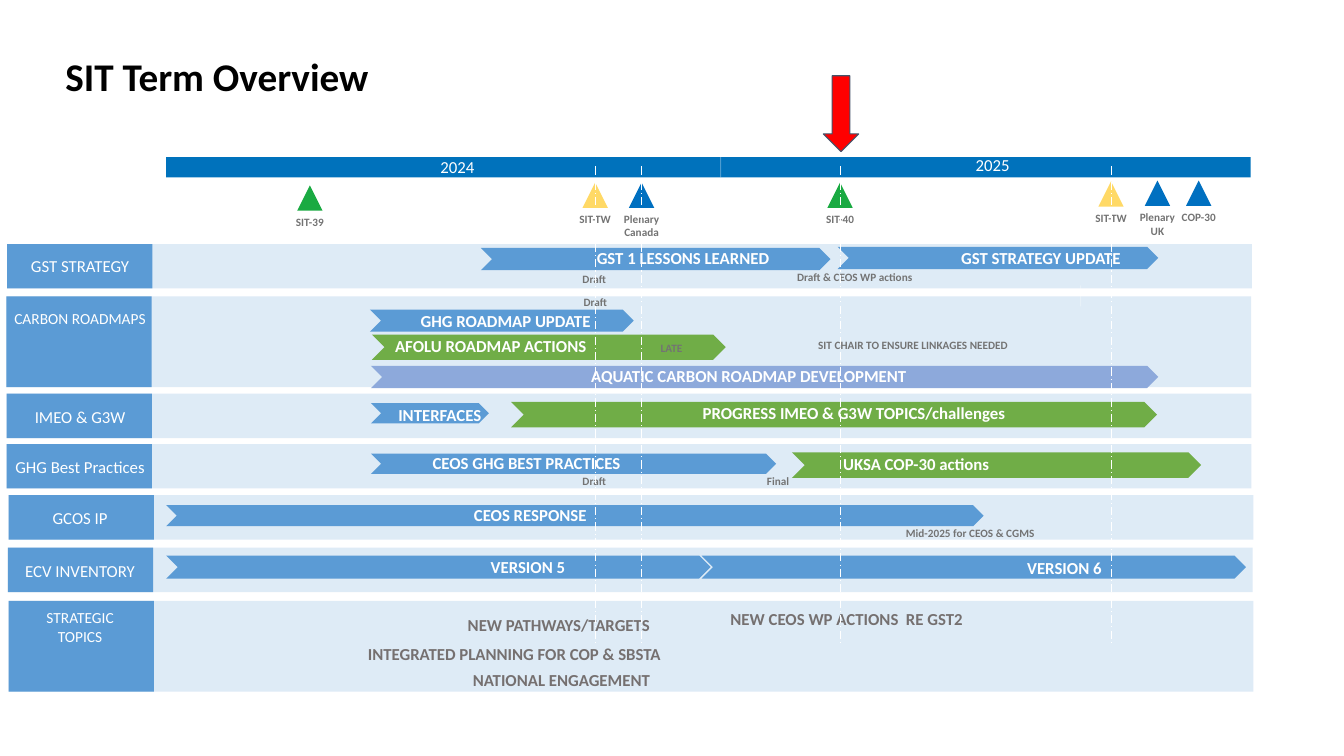
from pptx import Presentation
from pptx.dml.color import RGBColor
from pptx.enum.dml import MSO_LINE
from pptx.enum.shapes import MSO_CONNECTOR, MSO_SHAPE
from pptx.enum.text import MSO_ANCHOR, PP_ALIGN
from pptx.oxml.ns import qn
from pptx.oxml.xmlchemy import OxmlElement
from pptx.util import Cm, Pt

RECT, BAR, PEAK, DOWN = (MSO_SHAPE.RECTANGLE, MSO_SHAPE.CHEVRON,
                         MSO_SHAPE.ISOSCELES_TRIANGLE, MSO_SHAPE.DOWN_ARROW)
LEFT, MID = PP_ALIGN.LEFT, PP_ALIGN.CENTER
SOLID, DASH = MSO_LINE.SOLID, MSO_LINE.LONG_DASH_DOT
FONT = "Calibri"
BLUE, GREEN, LILAC, WHITE = "5B9BD5", "70AD47", "8DA9DB", "FFFFFF"
GREY, STONE = "737373", "757070"
SIT, TECH, MEET = "1AAA42", "FFD966", "0070C0"
rgb = RGBColor.from_string

deck = Presentation()
deck.slide_width, deck.slide_height = Cm(33.87), Cm(19.05)
slide = deck.slides.add_slide(deck.slide_layouts[5])
shapes = slide.shapes


def draw(kind, x, y, w, h, color):
    shape = shapes.add_shape(kind, Cm(x), Cm(y), Cm(w), Cm(h))
    shape.shadow.inherit = False
    shape.fill.solid()
    shape.fill.fore_color.rgb = rgb(color)
    shape.line.fill.background()
    return shape


def write(text, x, y, w, h=0.51, size=12, color=WHITE, bold=True, align=MID):
    """Add a text box without margins, its text centred vertically."""
    frame = shapes.add_textbox(Cm(x), Cm(y), Cm(w), Cm(h)).text_frame
    frame.margin_left = frame.margin_right = 0
    frame.margin_top = frame.margin_bottom = 0
    frame.word_wrap = True
    frame.vertical_anchor = MSO_ANCHOR.MIDDLE
    frame.text = text
    for para in frame.paragraphs:
        para.alignment = align
        font = para.font
        font.name, font.size, font.bold = FONT, Pt(size), bold
        font.color.rgb = rgb(color)


# Title
title = shapes.title
title.left, title.top, title.width, title.height = Cm(1.4), Cm(1.07), Cm(10.39), Cm(1.7)
frame = title.text_frame
frame.margin_left = frame.margin_right = Cm(0.25)
frame.margin_top = frame.margin_bottom = Cm(0.25)
frame.vertical_anchor = MSO_ANCHOR.TOP
frame.text = "SIT Term Overview"
head = frame.paragraphs[0]
head.alignment = LEFT
head.font.name, head.font.size, head.font.bold = FONT, Pt(28), True
head.font.color.rgb = rgb("000000")

# Rows: label, left, top, height, label top, label size
rows = [
    ("GST STRATEGY", 0.18, 6.15, 1.12, 6.45, 12),
    ("CARBON ROADMAPS", 0.16, 7.47, 2.29, 7.77, 11),
    ("IMEO & G3W", 0.17, 9.92, 1.12, 10.24, 12),
    ("GHG Best Practices", 0.17, 11.19, 1.12, 11.51, 12),
    ("GCOS IP", 0.22, 12.48, 1.12, 12.8, 12),
    ("ECV INVENTORY", 0.2, 13.8, 1.12, 14.12, 12),
    ("STRATEGIC\vTOPICS", 0.22, 15.14, 2.29, 15.54, 11),
]
for name, x, y, h, top, size in rows:
    band = draw(RECT, x, y, 31.37, h, BLUE)
    alpha = OxmlElement("a:alpha")
    alpha.set("val", "20000")
    band._element.spPr.find(".//" + qn("a:srgbClr")).append(alpha)
    draw(RECT, x, y, 3.66, h, BLUE)
    write(name, 0.19, top, 3.66, size=size, bold=False)

# Year bar
draw(RECT, 4.19, 3.96, 27.33, 0.51, "0072BC")
write("2024", 11.1, 3.94, 1.68, bold=False, align=LEFT)
write("2025", 24.59, 3.91, 1.55, bold=False, align=LEFT)

# Milestones: label, centre, top, colour, whether a dashed line runs down
marks = [
    ("SIT-39", 7.81, 4.67, SIT, False),
    ("SIT-TW", 15, 4.6, TECH, True),
    ("Plenary\nCanada", 16.17, 4.6, MEET, True),
    ("SIT-40", 21.17, 4.6, SIT, True),
    ("SIT-TW", 28, 4.57, TECH, True),
    ("Plenary\nUK", 29.17, 4.55, MEET, False),
    ("COP-30", 30.21, 4.55, MEET, False),
]
for name, mid, y, color, _ in marks:
    draw(PEAK, mid - 0.32, y, 0.64, 0.64, color)
    lines = name.count("\n") + 1
    write(name, mid - 0.65, y + 0.75, 1.3, 0.34 * lines, 8, GREY)

# Activities: bar left, top, width, height, colour; label, left, top, width
bars = [
    (12.12, 6.25, 8.81, 0.56, BLUE, "GST 1 LESSONS LEARNED", 14.88, 6.25, 4.67),
    (21.11, 6.22, 8.08, 0.56, BLUE, "GST STRATEGY UPDATE", 23.9, 6.25, 4.67),
    (9.32, 7.8, 6.65, 0.56, BLUE, "GHG ROADMAP UPDATE", 10.41, 7.82, 4.67),
    (9.37, 8.43, 8.92, 0.64, GREEN, "AFOLU ROADMAP ACTIONS", 9.78, 8.46, 5.18),
    (9.35, 9.22, 19.84, 0.56, LILAC, "AQUATIC CARBON ROADMAP DEVELOPMENT", 13.34, 9.22, 11.07),
    (9.35, 10.16, 2.97, 0.51, BLUE, "INTERFACES", 8.75, 10.19, 4.67),
    (12.88, 10.13, 16.28, 0.64, GREEN, "PROGRESS IMEO & G3W TOPICS/challenges", 17.12, 10.16, 8.81),
    (9.35, 11.43, 10.21, 0.51, BLUE, "CEOS GHG BEST PRACTICES", 10.41, 11.4, 5.72),
    (19.96, 11.4, 10.31, 0.64, GREEN, "UKSA COP-30 actions", 20.5, 11.43, 5.18),
    (4.19, 12.73, 20.6, 0.53, BLUE, "CEOS RESPONSE", 11.03, 12.73, 4.67),
    (4.19, 14, 13.72, 0.58, BLUE, "VERSION 5", 10.97, 14.02, 4.67),
    (17.68, 14, 13.72, 0.58, BLUE, "VERSION 6", 24.49, 14.05, 4.67),
]
for x, y, w, h, color, name, left, top, wide in bars:
    draw(BAR, x, y, w, h, color)
    write(name, left, top, wide)

notes = [
    ("Draft", 14.68, 6.86, 1.55),
    ("Draft & CEOS WP actions", 20.09, 6.81, 3.15),
    ("Draft", 14.71, 7.44, 1.55),
    ("LATE", 16.65, 8.6, 1),
    ("SIT CHAIR TO ENSURE LINKAGES NEEDED", 20.62, 8.53, 5.21),
    ("Draft", 14.68, 11.94, 1.55),
    ("Final", 19.33, 11.94, 1.55),
    ("Mid-2025 for CEOS & CGMS", 22.83, 13.26, 3.66),
]
for name, x, y, w in notes:
    write(name, x, y, w, 0.34, 8, GREY, align=LEFT)

topics = [
    ("NEW CEOS WP ACTIONS  RE GST2", 18.29, 15.34, 6.1),
    ("NEW PATHWAYS/TARGETS", 9.88, 15.49, 8.41),
    ("INTEGRATED PLANNING FOR COP & SBSTA", 8.76, 16.21, 8.41),
    ("NATIONAL ENGAGEMENT", 11.1, 16.87, 6.1),
]
for name, x, y, w in topics:
    write(name, x, y, w, color=STONE)

# White rules: x, top, bottom, dash, opacity in percent
rules = [(18.16, 3.96, 4.47, SOLID, 29), (27.23, 7.19, 7.72, SOLID, 29)]
rules += [(mid, 4.19, 16.26, DASH, 100) for _, mid, _, _, down in marks if down]
for x, top, foot, dash, shown in rules:
    rule = shapes.add_connector(MSO_CONNECTOR.STRAIGHT, Cm(x), Cm(top), Cm(x), Cm(foot))
    rule.line.color.rgb = rgb(WHITE)
    rule.line.width = Pt(0.75)
    rule.line.dash_style = dash
    props = rule._element.spPr
    props.append(OxmlElement("a:effectLst"))
    if shown < 100:
        alpha = OxmlElement("a:alpha")
        alpha.set("val", str(shown * 1000))
        props.find(".//" + qn("a:srgbClr")).append(alpha)

# Arrow at the present meeting
now = draw(DOWN, 20.75, 1.91, 0.89, 1.91, "FF0000")
now.line.color.rgb = rgb("44546A")
now.line.width = Pt(0.75)

deck.save("out.pptx")
